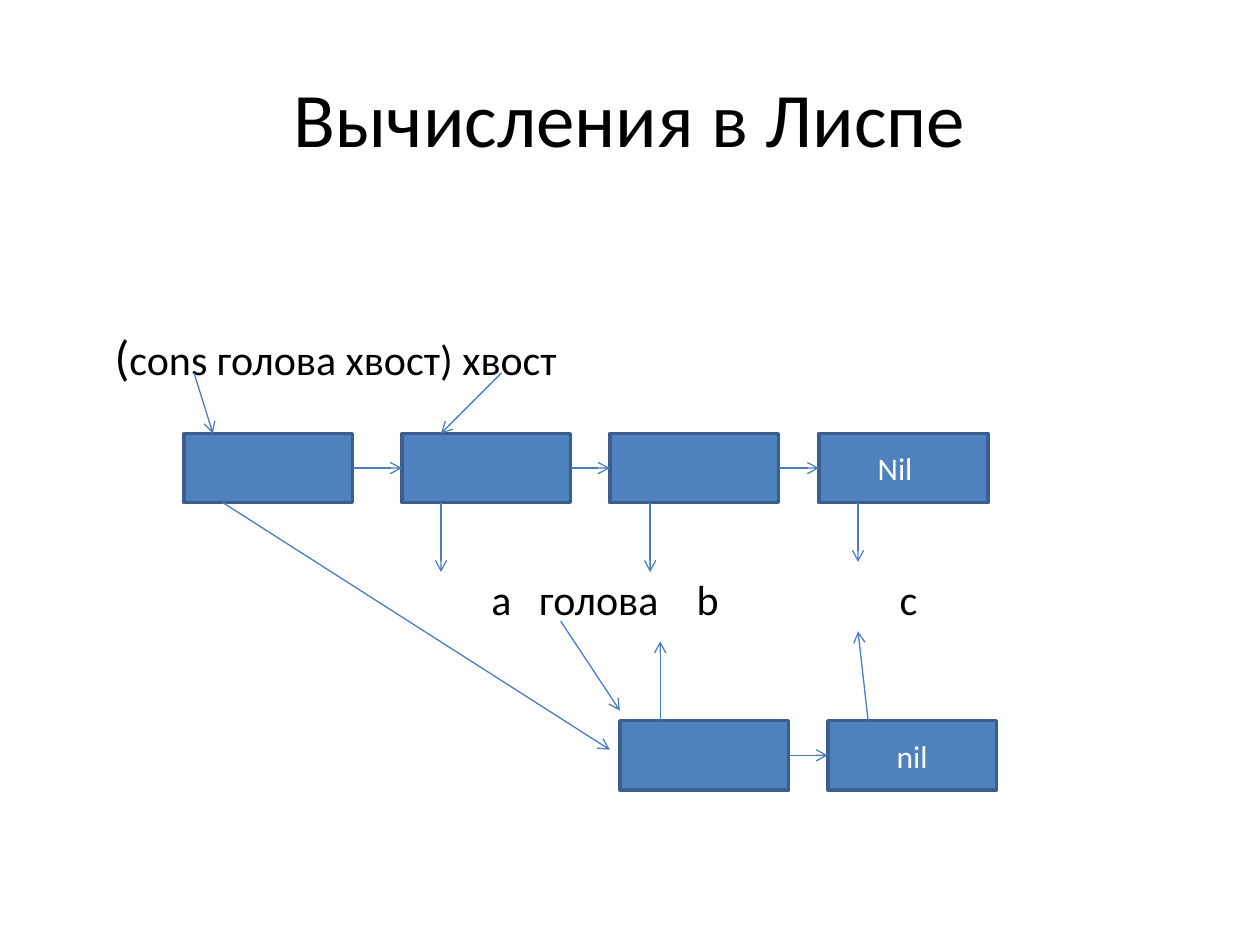
"""Build a slide on cons cells and list evaluation in Lisp."""
from dataclasses import dataclass

from lxml import etree
from pptx import Presentation, util as u
from pptx.dml.color import RGBColor
from pptx.enum import shapes, text
from pptx.oxml.ns import qn

COLORS = {"text": "000000", "cell": "4F81BD", "border": "3A5F8C",
          "arrow": "4B7EBC", "label": "FFFFFF"}
FONT = "Calibri"
CELL_W, CELL_H = 1.34, 0.55
TOP_Y, LOW_Y = 3.44, 5.72
TOP_BOTTOM = TOP_Y + CELL_H
ATOM_Y, ATOM_H = 4.55, 0.41


@dataclass
class Cell:
    x: float
    y: float
    label: str = ""
    right_inset: float = 0.1


@dataclass
class Arrow:
    x1: float
    y1: float
    x2: float
    y2: float


@dataclass
class Atom:
    x: float
    label: str
    w: float = 0.3


TOP_ROW = [Cell(1.46, TOP_Y), Cell(3.19, TOP_Y), Cell(4.84, TOP_Y),
           Cell(6.5, TOP_Y, "Nil", 0.23)]
LOW_ROW = [Cell(4.92, LOW_Y), Cell(6.57, LOW_Y, "nil")]
ATOMS = [Atom(3.9, "a"), Atom(4.28, "голова", 1.1), Atom(5.53, "b"), Atom(7.14, "c")]
POINTERS = [
    Arrow(1.77, TOP_BOTTOM, 4.84, 5.95),
    Arrow(3.5, TOP_BOTTOM, 3.5, 4.54),
    Arrow(5.16, TOP_BOTTOM, 5.16, 4.54),
    Arrow(6.81, TOP_BOTTOM, 6.81, 4.46),
    Arrow(5.24, LOW_Y, 5.24, 5.09),
    Arrow(6.89, LOW_Y, 6.81, 5.01),
    Arrow(1.54, 2.96, 1.69, TOP_Y),
    Arrow(3.98, 2.96, 3.5, TOP_Y),
    Arrow(4.45, 4.93, 4.92, 5.64),
]


def rgb(name: str) -> RGBColor:
    return RGBColor.from_string(COLORS[name])


def place(sp, x: float, y: float, w: float, h: float) -> None:
    sp.left, sp.top, sp.width, sp.height = map(u.Inches, (x, y, w, h))


def style_run(r, size: float, color: str = "text") -> None:
    r.font.name, r.font.size = FONT, u.Pt(size)
    r.font.color.rgb = rgb(color)


def add_title(s) -> None:
    sp = s.shapes.title
    place(sp, 0.5, 0.3, 9, 1.25)
    sp.text_frame.text = "Вычисления в Лиспе"
    style_run(sp.text_frame.paragraphs[0].runs[0], 44)


def add_body(s) -> None:
    sp = s.placeholders[1]
    place(sp, 0.43, 1.86, 9, 4.95)
    tf = sp.text_frame
    tf.auto_size = text.MSO_AUTO_SIZE.NONE
    tf.margin_top = u.Inches(0.73)
    p = tf.paragraphs[0]
    pPr = p._p.get_or_add_pPr()
    pPr.set("marL", str(u.Inches(0.38)))
    pPr.set("indent", "0")
    etree.SubElement(pPr, qn("a:buNone"))
    p.space_before = u.Pt(0)
    for words, size in (("(", 28), ("cons голова хвост) хвост", 24)):
        r = p.add_run()
        r.text = words
        style_run(r, size)


def add_atom(s, atom: Atom) -> None:
    sp = s.shapes.add_textbox(*map(u.Inches, (atom.x, ATOM_Y, atom.w, ATOM_H)))
    tf = sp.text_frame
    tf.margin_left = tf.margin_right = tf.margin_top = tf.margin_bottom = 0
    tf.word_wrap = True
    tf.text = atom.label
    style_run(tf.paragraphs[0].runs[0], 24)


def add_cell(s, cell: Cell):
    sp = s.shapes.add_shape(shapes.MSO_SHAPE.RECTANGLE, u.Inches(cell.x),
                            u.Inches(cell.y), u.Inches(CELL_W), u.Inches(CELL_H))
    sp.shadow.inherit = False
    sp.fill.solid()
    sp.fill.fore_color.rgb = rgb("cell")
    sp.line.color.rgb = rgb("border")
    sp.line.width = u.Pt(2)
    if cell.label:
        tf = sp.text_frame
        tf.text = cell.label
        tf.margin_right = u.Inches(cell.right_inset)
        tf.vertical_anchor = text.MSO_ANCHOR.MIDDLE
        p = tf.paragraphs[0]
        p.alignment = text.PP_ALIGN.CENTER
        style_run(p.runs[0], 18, "label")
    return sp


def add_arrow(s, a: Arrow):
    c = s.shapes.add_connector(shapes.MSO_CONNECTOR.STRAIGHT,
                               *map(u.Inches, (a.x1, a.y1, a.x2, a.y2)))
    c.line.color.rgb = rgb("arrow")
    c.line.width = u.Pt(0.75)
    etree.SubElement(c.line._get_or_add_ln(), qn("a:tailEnd"), type="arrow")
    etree.SubElement(c._element.spPr, qn("a:effectLst"))
    return c


def add_row(s, cells: list[Cell]) -> None:
    boxes = [add_cell(s, cell) for cell in cells]
    for left, right in zip(boxes, boxes[1:]):
        c = add_arrow(s, Arrow(0, 0, 1, 0))
        c.begin_connect(left, 3)
        c.end_connect(right, 1)


def main() -> None:
    prs = Presentation()
    prs.slide_width, prs.slide_height = u.Inches(10), u.Inches(7.5)
    s = prs.slides.add_slide(prs.slide_layouts[1])
    add_title(s)
    add_body(s)
    for atom in ATOMS:
        add_atom(s, atom)
    for row in (TOP_ROW, LOW_ROW):
        add_row(s, row)
    for pointer in POINTERS:
        add_arrow(s, pointer)
    prs.save("out.pptx")


if __name__ == "__main__":
    main()
